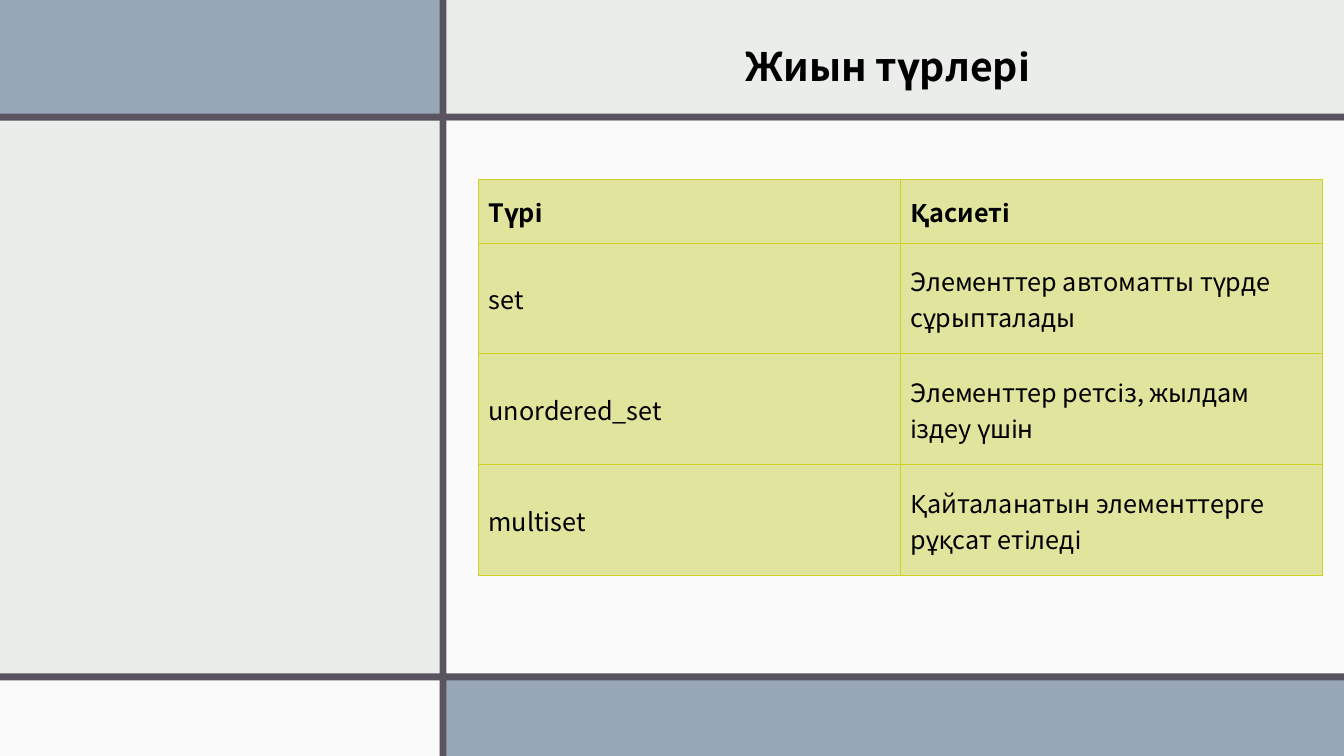
from typing import NamedTuple

import pptx
import pptx.dml.color
import pptx.enum.shapes
import pptx.enum.text
import pptx.oxml
import pptx.oxml.ns
import pptx.slide
import pptx.table
import pptx.text.text
import pptx.util

Pt = pptx.util.Pt
RGBColor = pptx.dml.color.RGBColor

PAPER = RGBColor(0xEB, 0xED, 0xEB)
WHITE = RGBColor(0xFF, 0xFF, 0xFF)
BLUE = RGBColor(0x97, 0xA7, 0xB8)
DARK = RGBColor(0x59, 0x54, 0x60)
LIME = RGBColor(0xCE, 0xD2, 0x28)
PALE = RGBColor(0xE1, 0xE4, 0x9D)
BLACK = RGBColor(0, 0, 0)
FONT = "Noto Sans CJK JP"
WIDE, HIGH = 960, 540
BAR = 5


class Block(NamedTuple):
    left: float
    top: float
    width: float
    height: float
    color: RGBColor
    alpha: int = 100


BLOCKS = [
    Block(0, 0, 316, 83.5, BLUE),
    Block(0, 81.2, WIDE, BAR, DARK),
    Block(314, 86.2, 646, 395, WHITE, 75),
    Block(318, 484, 642, 56, BLUE),
    Block(0, 485, 314, 55, WHITE, 75),
    Block(0, 481, WIDE, BAR, DARK),
    Block(314, 0, BAR, HIGH, DARK),
]

ROWS = [
    ("Түрі", "Қасиеті"),
    ("set", "Элементтер автоматты түрде сұрыпталады"),
    ("unordered_set", "Элементтер ретсіз, жылдам іздеу үшін"),
    ("multiset", "Қайталанатын элементтерге рұқсат етіледі"),
]
COL = 301.3
HEAD, BODY = 45.4, 79.2


def style(para: pptx.text.text._Paragraph, size: float, bold: bool) -> None:
    font = para.font
    font.name = FONT
    font.size = Pt(size)
    font.bold = bold
    font.color.rgb = BLACK


def draw_block(slide: pptx.slide.Slide, block: Block) -> None:
    shape = slide.shapes.add_shape(
        pptx.enum.shapes.MSO_SHAPE.RECTANGLE,
        Pt(block.left), Pt(block.top), Pt(block.width), Pt(block.height))
    shape.shadow.inherit = False
    shape.line.fill.background()
    shape.fill.solid()
    shape.fill.fore_color.rgb = block.color
    if block.alpha < 100:
        tint = shape.fill._xPr.find(".//" + pptx.oxml.ns.qn("a:srgbClr"))
        tint.append(pptx.oxml.parse_xml(
            f'<a:alpha {pptx.oxml.ns.nsdecls("a")} val="{block.alpha * 1000}"/>'))


def draw_cell(cell: pptx.table._Cell, text: str, bold: bool) -> None:
    props = cell._tc.get_or_add_tcPr()
    for side in "LRTB":
        props.append(pptx.oxml.parse_xml(
            f'<a:ln{side} {pptx.oxml.ns.nsdecls("a")} w="{Pt(0.75)}">'
            f'<a:solidFill><a:srgbClr val="{LIME}"/></a:solidFill></a:ln{side}>'))
    cell.fill.solid()
    cell.fill.fore_color.rgb = PALE
    cell.vertical_anchor = pptx.enum.text.MSO_ANCHOR.MIDDLE
    cell.text = text
    style(cell.text_frame.paragraphs[0], 18, bold)


def draw_table(slide: pptx.slide.Slide) -> None:
    cols = len(ROWS[0])
    table = slide.shapes.add_table(
        len(ROWS), cols, Pt(341.8), Pt(128.2), Pt(COL * cols),
        Pt(HEAD + BODY * (len(ROWS) - 1))).table
    table.first_row = table.horz_banding = False
    for col in table.columns:
        col.width = Pt(COL)
    for r, texts in enumerate(ROWS):
        table.rows[r].height = Pt(BODY if r else HEAD)
        for c, text in enumerate(texts):
            draw_cell(table.cell(r, c), text, r == 0)


def draw_title(slide: pptx.slide.Slide) -> None:
    title = slide.shapes.title
    title.left, title.top = Pt(525.6), Pt(26.6)
    title.width, title.height = Pt(233.3), Pt(41.2)
    frame = title.text_frame
    frame.text = "Жиын түрлері"
    frame.word_wrap = False
    frame.auto_size = pptx.enum.text.MSO_AUTO_SIZE.SHAPE_TO_FIT_TEXT
    frame.vertical_anchor = pptx.enum.text.MSO_ANCHOR.TOP
    para = frame.paragraphs[0]
    para.alignment = pptx.enum.text.PP_ALIGN.LEFT
    style(para, 28, True)
    # Bring the title in front of the panels.
    slide.shapes._spTree.append(title._element)


def main() -> None:
    deck = pptx.Presentation()
    deck.slide_width, deck.slide_height = Pt(WIDE), Pt(HIGH)
    slide = deck.slides.add_slide(deck.slide_layouts[5])
    slide.background.fill.solid()
    slide.background.fill.fore_color.rgb = PAPER
    for block in BLOCKS:
        draw_block(slide, block)
    draw_table(slide)
    draw_title(slide)
    deck.save("out.pptx")


if __name__ == "__main__":
    main()
